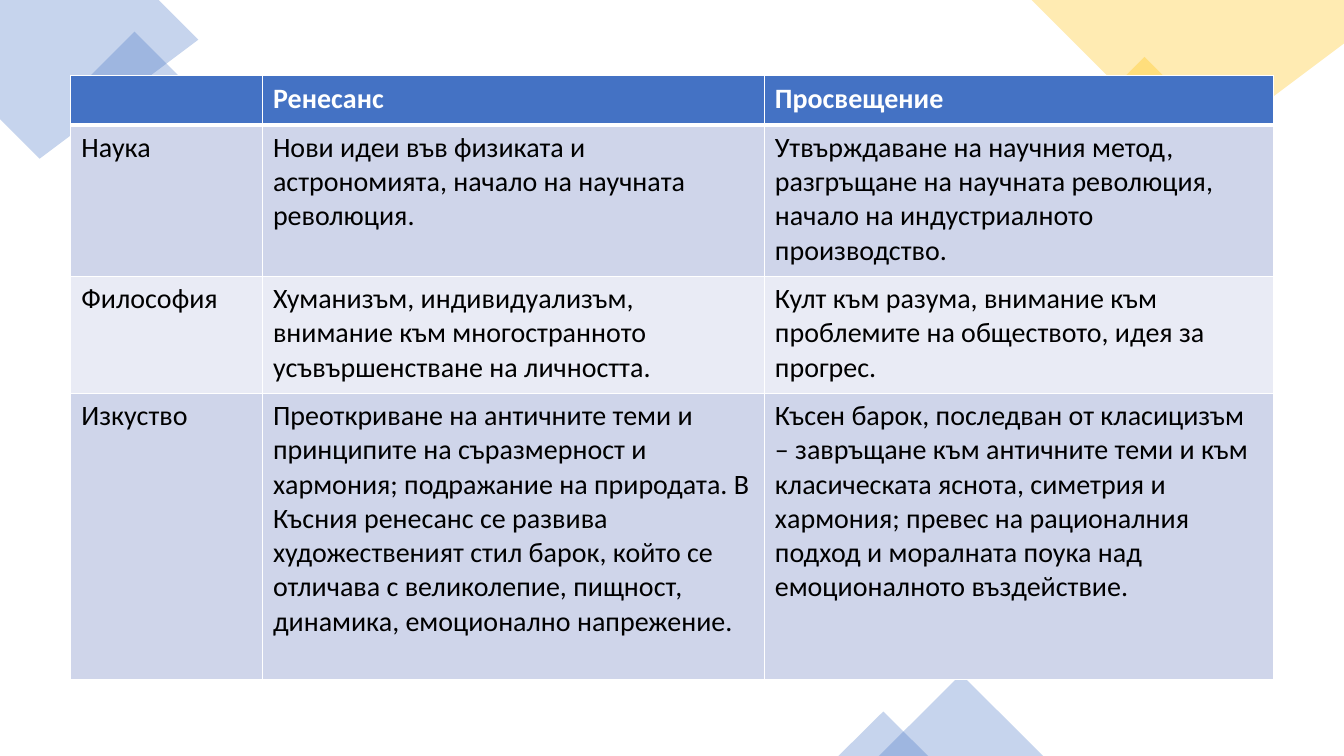
"""Build a slide comparing the Renaissance and the Enlightenment in a table."""
from lxml import etree
from pptx import Presentation
from pptx.dml.color import RGBColor
from pptx.enum.shapes import MSO_SHAPE
from pptx.oxml.ns import qn
from pptx.util import Cm, Pt

RECTANGLE = MSO_SHAPE.RECTANGLE
TRIANGLE = MSO_SHAPE.ISOSCELES_TRIANGLE

COLORS = {
    "blue": "4472C4",
    "yellow": "FFC000",
    "white": "FFFFFF",
    "black": "000000",
    "dark band": "CFD5EA",
    "light band": "E9EBF5",
}
FONT = "Calibri"
OPACITY = 30

ROWS = [
    ("", "Ренесанс", "Просвещение"),
    (
        "Наука",
        "Нови идеи във физиката и астрономията, начало на научната революция.",
        "Утвърждаване на научния метод, разгръщане на научната революция, "
        "начало на индустриалното производство.",
    ),
    (
        "Философия",
        "Хуманизъм, индивидуализъм, внимание към многостранното "
        "усъвършенстване на личността.",
        "Култ към разума, внимание към проблемите на обществото, идея за прогрес.",
    ),
    (
        "Изкуство",
        "Преоткриване на античните теми и принципите на съразмерност и хармония; "
        "подражание на природата. В Късния ренесанс се развива художественият стил "
        "барок, който се отличава с великолепие, пищност, динамика, "
        "емоционално напрежение.",
        "Късен барок, последван от класицизъм – завръщане към античните теми и към "
        "класическата яснота, симетрия и хармония; превес на рационалния подход и "
        "моралната поука над емоционалното въздействие.",
    ),
]
COLUMN_WIDTHS = (4.83, 12.65, 12.83)
ROW_HEIGHTS = (1.24, 3.81, 2.95, 7.21)
TABLE_LEFT, TABLE_TOP = 1.78, 1.91

CORNERS = [
    ("blue", [(0, 0), (3.89, 0), (4.65, 0.76), (1.04, 4.34), (0, 3.3)]),
    ("yellow", [(33.87, 0), (25.98, 0), (30.3, 4.11), (33.87, 0.71)]),
]
ORNAMENTS = [
    ("blue", RECTANGLE, 315, (2.49, 1.17, 1.8, 1.8)),
    ("yellow", RECTANGLE, 315, (27.89, 1.83, 1.91, 1.91)),
    ("blue", TRIANGLE, 0, (22.15, 16.99, 4.14, 2.06)),
    ("blue", TRIANGLE, 0, (21.13, 17.93, 2.26, 1.12)),
]


def rgb(name):
    return RGBColor.from_string(COLORS[name])


def tint(shape, color):
    shape.shadow.inherit = False
    shape.line.fill.background()
    shape.fill.solid()
    shape.fill.fore_color.rgb = rgb(color)
    color_node = shape.fill._xPr.find(qn("a:solidFill"))[0]
    etree.SubElement(color_node, qn("a:alpha"), val=str(OPACITY * 1000))


def add_decoration(page):
    for color, points in CORNERS:
        builder = page.shapes.build_freeform(*points[0], scale=Cm(1))
        builder.add_line_segments(points[1:], close=True)
        tint(builder.convert_to_shape(), color)
    for color, kind, rotation, frame in ORNAMENTS:
        ornament = page.shapes.add_shape(kind, *map(Cm, frame))
        ornament.rotation = rotation
        tint(ornament, color)


def set_borders(cell, widths):
    properties = cell._tc.get_or_add_tcPr()
    for side, width in widths.items():
        line = etree.SubElement(properties, qn(f"a:ln{side}"), w=str(Pt(width)))
        fill = etree.SubElement(line, qn("a:solidFill"))
        etree.SubElement(fill, qn("a:srgbClr"), val=COLORS["white"])


def fill_cell(cell, text, row):
    header = row == 0
    band = "blue" if header else "dark band" if row % 2 else "light band"
    set_borders(cell, {"L": 1, "R": 1, "T": 3 if row == 1 else 1, "B": 3 if header else 1})
    cell.fill.solid()
    cell.fill.fore_color.rgb = rgb(band)
    cell.margin_left = cell.margin_right = Cm(0.27)
    cell.margin_top = cell.margin_bottom = Cm(0.14)
    if text:
        span = cell.text_frame.paragraphs[0].add_run()
        span.text = text
        span.font.name = FONT
        span.font.size = Pt(20)
        span.font.bold = header
        span.font.color.rgb = rgb("white" if header else "black")


def add_comparison(page):
    frame = map(Cm, (TABLE_LEFT, TABLE_TOP, sum(COLUMN_WIDTHS), sum(ROW_HEIGHTS)))
    table = page.shapes.add_table(len(ROWS), len(COLUMN_WIDTHS), *frame).table
    for column, width in zip(table.columns, COLUMN_WIDTHS):
        column.width = Cm(width)
    for row, height in zip(table.rows, ROW_HEIGHTS):
        row.height = Cm(height)
    for row, texts in enumerate(ROWS):
        for column, text in enumerate(texts):
            fill_cell(table.cell(row, column), text, row)


def main():
    deck = Presentation()
    deck.slide_width, deck.slide_height = Cm(33.87), Cm(19.05)
    page = deck.slides.add_slide(deck.slide_layouts[6])
    add_decoration(page)
    add_comparison(page)
    deck.save("out.pptx")


if __name__ == "__main__":
    main()
